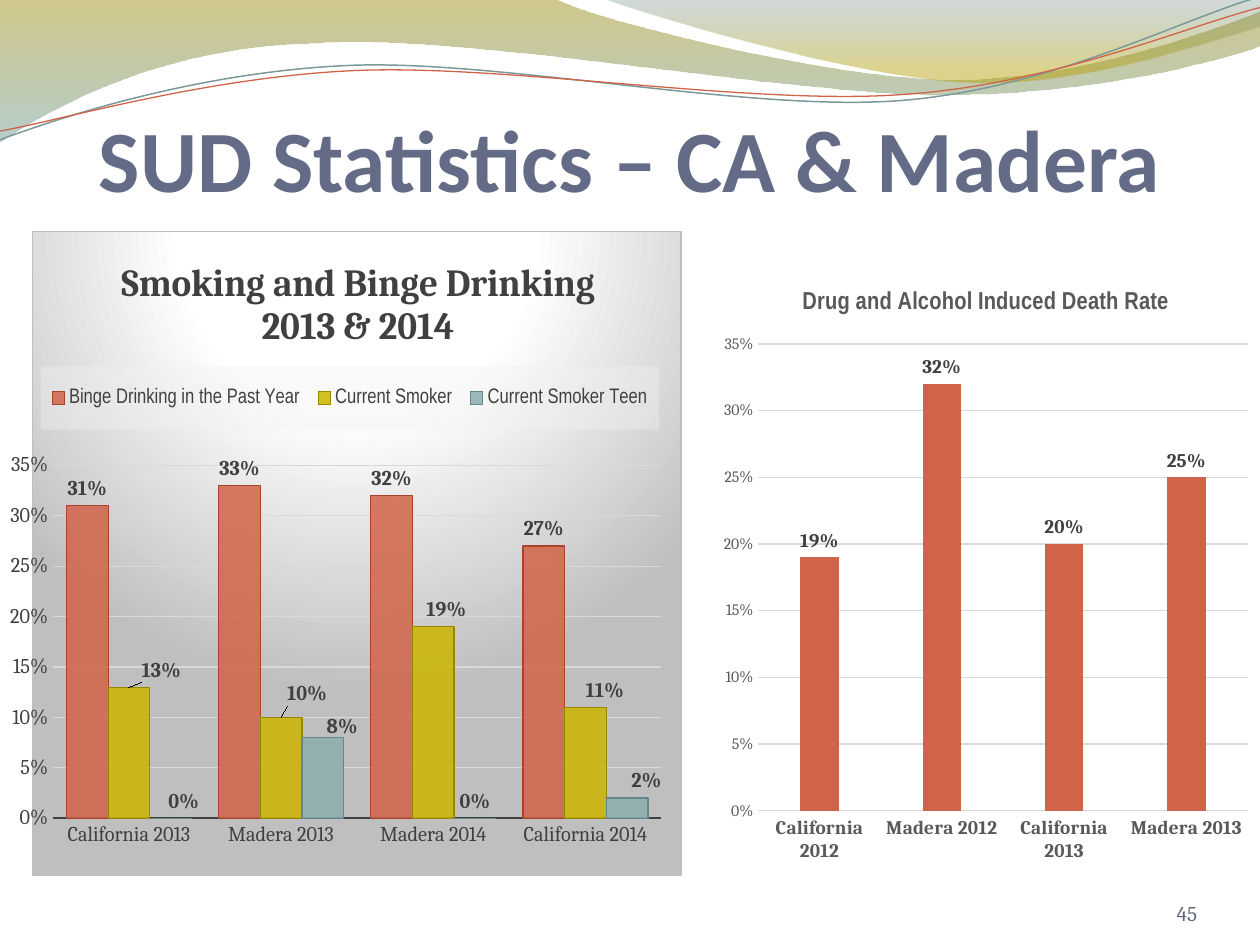
from dataclasses import dataclass
from typing import Optional

from pptx import Presentation
from pptx.chart.data import CategoryChartData
from pptx.dml.color import RGBColor
from pptx.enum.chart import XL_CHART_TYPE as ChartType, XL_LABEL_POSITION as LabelPosition
from pptx.enum.chart import XL_LEGEND_POSITION as LegendPosition, XL_TICK_MARK as TickMark
from pptx.enum.text import MSO_ANCHOR as Anchor, PP_ALIGN as Align
from pptx.oxml import parse_xml
from pptx.oxml.ns import nsdecls, qn
from pptx.util import Inches, Pt

WIDTH, HEIGHT = 10, 7.5
SERIF, NARROW = "Cambria", "Arial Narrow"
DARK, GRAY, GRID = "404040", "595959", "D9D9D9"
NO_LEADER_LINES = (f'<c:extLst {nsdecls("c")}><c:ext uri="{{CE6537A1-D6FC-4f65-9D91-7224C49458BB}}" '
                   'xmlns:c15="http://schemas.microsoft.com/office/drawing/2012/chart">'
                   '<c15:showLeaderLines val="0"/></c:ext></c:extLst>')


@dataclass
class Wave:
    """Outline of points: three after the start make a Bezier curve, one a straight line."""
    start: tuple
    segments: list
    stops: Optional[list] = None
    line: Optional[tuple] = None


@dataclass
class Bars:
    name: str
    values: list
    color: str
    alpha: int = 100
    line: Optional[str] = None
    label_offsets: tuple = ()


@dataclass
class BarChart:
    box: tuple
    plot: tuple
    categories: list
    bars: list
    gap: int
    title: list
    title_font: tuple
    category_font: tuple
    value_font: tuple
    label_font: tuple
    axis_line: tuple


WAVES = [
    Wave((0, 0), [[(4.4, -0.01)], [(4.76, 0.17), (6.64, 0.63), (7.58, 0.63)],
                  [(8.53, 0.63), (9.58, 0.26), (10, 0.09)], [(10.01, 0.36)],
                  [(9.83, 0.44), (8.7, 0.76), (7.46, 0.75)],
                  [(6.22, 0.75), (3.82, 0.28), (2.57, 0.34)],
                  [(1.29, 0.36), (0.46, 0.83), (-0.01, 1.13)]],
         stops=[(0, "978500", 45), (100, "77A5A6", 55)]),
    Wave((4.79, -0.01), [[(5.09, 0.11), (6.82, 0.62), (7.69, 0.65)],
                         [(8.56, 0.69), (9.61, 0.32), (10, 0.21)], [(10, 0)]],
         stops=[(0, "648484", 30), (80, "B49F00", 45)]),
    Wave((0, 1.11), [[(0.48, 0.93), (1.58, 0.57), (2.77, 0.52)],
                     [(3.95, 0.47), (5.93, 0.89), (7.13, 0.8)],
                     [(8.33, 0.71), (9.38, 0.15), (9.98, -0.02)]], line=("7C999A", 0.85)),
    Wave((0, 1.04), [[(0.47, 0.96), (1.64, 0.61), (2.83, 0.56)],
                     [(4.03, 0.51), (5.97, 0.84), (7.17, 0.75)],
                     [(8.36, 0.67), (9.41, 0.21), (10, 0.06)]], line=("D16349", 0.75)),
]

SMOKING = BarChart(
    (0.08, 1.83, 5.33, 5.12), (0.031, 0.364, 0.939, 0.548),
    ["California 2013", "Madera 2013", "Madera 2014", "California 2014"],
    [Bars("Binge Drinking in the Past Year", [0.31, 0.33, 0.32, 0.27], "D16349", 85, "A9432B"),
     Bars("Current Smoker", [0.13, 0.1, 0.19, 0.11], "CCB400", 85, "998700",
          ((0.05, 0), (0.04, -0.01), (0.02, 0), (0.03, 0))),
     Bars("Current Smoker Teen", [0, 0.08, 0, 0.02], "8CADAE", 85, "61898A",
          ((0.02, 0), (0.03, 0.01), None, (0.03, 0)))],
    65, ["Smoking and Binge Drinking", "2013 & 2014"], (SERIF, 22, DARK, True),
    (SERIF, 12, DARK), (SERIF, 12, DARK), (SERIF, 12, DARK, True), (DARK, 1.5))

DEATHS = BarChart(
    (5.66, 2.1, 4.33, 4.85), (0.083, 0.13, 0.897, 0.764),
    ["California 2012", "Madera 2012", "California 2013", "Madera 2013"],
    [Bars("Drug and Alcohol Induced Death Rate", [0.19, 0.32, 0.2, 0.25], "D16349")],
    219, ["Drug and Alcohol Induced Death Rate"], (NARROW, 14, GRAY, True),
    (SERIF, 11, GRAY, True), (SERIF, 9, GRAY), (SERIF, 11, DARK, True), (GRID, 0.75))


def rgb(color: str) -> RGBColor:
    return RGBColor.from_string(color)


def style_font(font, name: str, size: float, color: str, bold: bool = False) -> None:
    font.name, font.size, font.bold = name, Pt(size), bold
    font.color.rgb = rgb(color)


def style_line(line, color: str, width: float) -> None:
    line.color.rgb, line.width = rgb(color), Pt(width)


def color_xml(color: str, alpha: int = 100) -> str:
    return f'<a:srgbClr val="{color}"><a:alpha val="{alpha * 1000}"/></a:srgbClr>'


def solid_xml(color: str, alpha: int):
    return parse_xml(f'<a:solidFill {nsdecls("a")}>{color_xml(color, alpha)}</a:solidFill>')


def gradient_xml(stops: list, direction: str = '<a:lin ang="5400000" scaled="0"/>'):
    marks = "".join(f'<a:gs pos="{position * 1000}">{color_xml(color, alpha)}</a:gs>'
                    for position, color, alpha in stops)
    return parse_xml(f'<a:gradFill {nsdecls("a")}><a:gsLst>{marks}</a:gsLst>{direction}</a:gradFill>')


def set_layout(parent, after: str, x: float, y: float, size: tuple = (),
               mode: str = "edge", inner: bool = False) -> None:
    """Place a chart part by hand, in shares of the chart's size."""
    parts = '<c:layoutTarget val="inner"/>' if inner else ""
    if mode == "edge":
        parts += '<c:xMode val="edge"/><c:yMode val="edge"/>'
    parts += "".join(f'<c:{key} val="{value}"/>' for key, value in zip("xywh", (x, y, *size)))
    layout = parse_xml(f'<c:layout {nsdecls("c")}><c:manualLayout>{parts}</c:manualLayout></c:layout>')
    for old in parent.findall(qn("c:layout")):
        parent.remove(old)
    if after:
        parent.find(qn(after)).addnext(layout)
    else:
        parent.insert(0, layout)


def replace_no_fill(properties, fill) -> None:
    properties.replace(properties.find(qn("a:noFill")), fill)


def draw_wave(slide, wave: Wave) -> None:
    builder = slide.shapes.build_freeform(*map(Inches, wave.start))
    points = [tuple(map(Inches, point)) for segment in wave.segments for point in segment]
    builder.add_line_segments(points, close=bool(wave.stops))
    shape = builder.convert_to_shape()
    steps = iter(shape._element.xpath(".//a:path/a:lnTo"))
    for segment in wave.segments:
        corners = [next(steps) for _ in segment]
        if len(corners) == 3:
            curve = parse_xml(f'<a:cubicBezTo {nsdecls("a")}/>')
            corners[0].addprevious(curve)
            for corner in corners:
                curve.append(corner[0])
                corner.getparent().remove(corner)
    shape.shadow.inherit = False
    shape.fill.background()
    if wave.stops:
        replace_no_fill(shape._element.spPr, gradient_xml(wave.stops))
        shape.line.fill.background()
    else:
        style_line(shape.line, *wave.line)


def style_series(series, bars: Bars, label_font: tuple) -> None:
    series.format.fill.background()
    replace_no_fill(series._element.spPr, solid_xml(bars.color, bars.alpha))
    if bars.line:
        style_line(series.format.line, bars.line, 0.75)
    labels = series.data_labels
    labels.show_value, labels.position = True, LabelPosition.OUTSIDE_END
    labels.number_format, labels.number_format_is_linked = "0%", False
    style_font(labels.font, *label_font)
    for index, offset in enumerate(bars.label_offsets):
        if offset:
            label = series.points[index].data_label
            style_font(label.font, *label_font)
            label.position = LabelPosition.OUTSIDE_END
            element = series._element.xpath(f"c:dLbls/c:dLbl[c:idx/@val={index}]")[0]
            set_layout(element, "c:idx", *offset, mode="factor")
            element.find(qn("c:layout")).addnext(
                parse_xml(f'<c:numFmt {nsdecls("c")} formatCode="0%" sourceLinked="0"/>'))
    labels._element.append(parse_xml(NO_LEADER_LINES))


def draw_chart(slide, model: BarChart):
    data = CategoryChartData(number_format="0%")
    data.categories = model.categories
    for bars in model.bars:
        data.add_series(bars.name, bars.values)
    chart = slide.shapes.add_chart(ChartType.COLUMN_CLUSTERED, *map(Inches, model.box), data).chart
    style_font(chart.font, SERIF, 10, "000000")
    chart.has_legend = False
    frame = chart.chart_title.text_frame
    for index, text in enumerate(model.title):
        paragraph = frame.add_paragraph() if index else frame.paragraphs[0]
        run = paragraph.add_run()
        run.text = text
        style_font(run.font, *model.title_font)
    plot = chart.plots[0]
    plot.gap_width, plot.overlap, plot.vary_by_categories = model.gap, 0, False
    left, top, *size = model.plot
    set_layout(chart._chartSpace.chart.plotArea, "", left, top, size, inner=True)
    for axis, font in ((chart.category_axis, model.category_font), (chart.value_axis, model.value_font)):
        axis.major_tick_mark = axis.minor_tick_mark = TickMark.NONE
        style_font(axis.tick_labels.font, *font)
    style_line(chart.category_axis.format.line, *model.axis_line)
    values = chart.value_axis
    values.minimum_scale, values.maximum_scale, values.major_unit = 0, 0.35, 0.05
    values.tick_labels.number_format, values.tick_labels.number_format_is_linked = "0%", False
    values.format.line.fill.background()
    style_line(values.major_gridlines.format.line, GRID, 0.75)
    for series, bars in zip(plot.series, model.bars):
        style_series(series, bars, model.label_font)
    return chart


def decorate_smoking_chart(chart) -> None:
    """Add the legend panel, the title's place and the glowing backdrop."""
    chart.has_legend = True
    legend = chart.legend
    legend.position, legend.include_in_layout = LegendPosition.TOP, False
    style_font(legend.font, NARROW, 12, DARK)
    set_layout(legend._element, "c:legendPos", 0.012, 0.21, (0.954, 0.098))
    panel = parse_xml(f'<c:spPr {nsdecls("c", "a")}/>')
    panel.append(solid_xml("F2F2F2", 39))
    legend._element.find(qn("c:txPr")).addprevious(panel)
    set_layout(chart.chart_title._element, "c:tx", 0.131, 0.038)
    glow = '<a:path path="circle"><a:fillToRect l="50000" t="-80000" r="50000" b="180000"/></a:path>'
    backdrop = parse_xml(f'<c:spPr {nsdecls("c", "a")}><a:ln w="9525"><a:solidFill>'
                         f'{color_xml("BFBFBF")}</a:solidFill></a:ln></c:spPr>')
    backdrop.insert(0, gradient_xml([(0, "FFFFFF", 100), (39, "FFFFFF", 100), (100, "BFBFBF", 100)], glow))
    chart._chartSpace.chart.addnext(backdrop)


def write_text(shape, box: tuple, text: str, align, font: tuple, top_margin: float = 0) -> None:
    shape.left, shape.top, shape.width, shape.height = map(Inches, box)
    frame = shape.text_frame
    frame.word_wrap, frame.vertical_anchor = True, Anchor.BOTTOM
    frame.margin_left = frame.margin_right = frame.margin_bottom = 0
    frame.margin_top = Inches(top_margin)
    paragraph = frame.paragraphs[0]
    paragraph.alignment = align
    run = paragraph.add_run()
    run.text = text
    style_font(run.font, *font)


def main() -> None:
    presentation = Presentation()
    presentation.slide_width, presentation.slide_height = Inches(WIDTH), Inches(HEIGHT)
    slide = presentation.slides.add_slide(presentation.slide_layouts[5])
    for wave in WAVES:
        draw_wave(slide, wave)
    write_text(slide.shapes.title, (0.5, 0.77, 9, 0.9), "SUD Statistics – CA & Madera",
               Align.CENTER, ("Calibri", 50, "646B86", True), 0.05)
    number_box = (8.67, 6.95, 0.83, 0.4)
    write_text(slide.shapes.add_textbox(*map(Inches, number_box)), number_box, "45",
               Align.RIGHT, (SERIF, 12, "606680"))
    decorate_smoking_chart(draw_chart(slide, SMOKING))
    draw_chart(slide, DEATHS)
    presentation.save("out.pptx")


if __name__ == "__main__":
    main()
